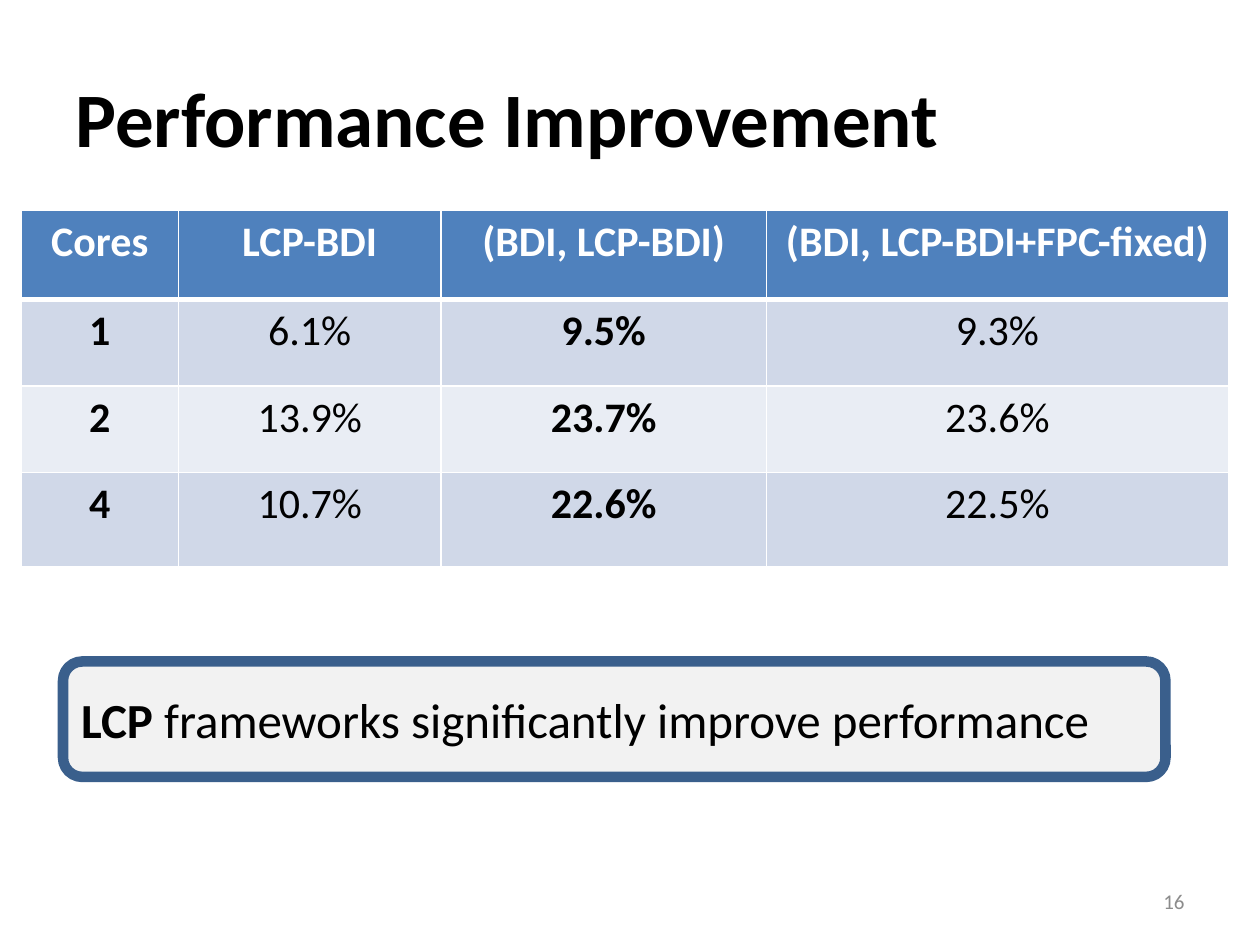
from dataclasses import dataclass

from lxml import etree
from pptx import Presentation
from pptx.dml.color import RGBColor
from pptx.enum.shapes import MSO_SHAPE
from pptx.enum.text import MSO_ANCHOR, PP_ALIGN
from pptx.oxml.ns import qn
from pptx.util import Pt

LEFT, CENTER, RIGHT = PP_ALIGN.LEFT, PP_ALIGN.CENTER, PP_ALIGN.RIGHT
MIDDLE = MSO_ANCHOR.MIDDLE
ROUNDED = MSO_SHAPE.ROUNDED_RECTANGLE

FONT = "Calibri"
COLORS = {
    "text": "000000",
    "header_text": "FFFFFF",
    "page_number": "8C8C8C",
    "header": "4F81BD",
    "odd_row": "D0D8E8",
    "even_row": "E9EDF4",
    "grid": "FFFFFF",
    "callout": "F2F2F2",
    "callout_line": "3A5F8C",
}

RESULTS = [
    ["Cores", "LCP-BDI", "(BDI, LCP-BDI)", "(BDI, LCP-BDI+FPC-fixed)"],
    ["1", "6.1%", "9.5%", "9.3%"],
    ["2", "13.9%", "23.7%", "23.6%"],
    ["4", "10.7%", "22.6%", "22.5%"],
]
COLUMN_WIDTHS = [90, 150, 186, 264]
ROW_HEIGHTS = [51, 49.5, 49.5, 54]
BOLD_COLUMNS = (0, 2)


@dataclass
class Box:
    left: float
    top: float
    width: float
    height: float

    def lengths(self) -> list:
        return [Pt(v) for v in (self.left, self.top, self.width, self.height)]


@dataclass
class TextStyle:
    size: float
    color: str = "text"
    bold: bool | None = None
    align: PP_ALIGN = LEFT


def rgb(name: str) -> RGBColor:
    return RGBColor.from_string(COLORS[name])


def style_paragraph(paragraph, style: TextStyle) -> None:
    paragraph.alignment = style.align
    font = paragraph.font
    font.name, font.size, font.bold = FONT, Pt(style.size), style.bold
    font.color.rgb = rgb(style.color)


def add_label(slide, text: str, box: Box, style: TextStyle) -> None:
    frame = slide.shapes.add_textbox(*box.lengths()).text_frame
    frame.word_wrap = True
    frame.vertical_anchor = MIDDLE
    frame.text = text
    style_paragraph(frame.paragraphs[0], style)


def set_borders(cell, bottom_width: float) -> None:
    """Draw grid lines; call before filling, as lines precede the fill in XML."""
    properties = cell._tc.get_or_add_tcPr()
    for side, width in (("L", 1), ("R", 1), ("T", 1), ("B", bottom_width)):
        line = etree.SubElement(properties, qn(f"a:ln{side}"), w=str(Pt(width)))
        fill = etree.SubElement(line, qn("a:solidFill"))
        etree.SubElement(fill, qn("a:srgbClr"), val=COLORS["grid"])


def fill_cell(cell, text: str, row: int, column: int) -> None:
    is_header = row == 0
    set_borders(cell, 3 if is_header else 1)
    cell.fill.solid()
    row_color = "odd_row" if row % 2 else "even_row"
    cell.fill.fore_color.rgb = rgb("header" if is_header else row_color)
    cell.text = text
    style_paragraph(cell.text_frame.paragraphs[0], TextStyle(
        24, "header_text" if is_header else "text",
        is_header or column in BOLD_COLUMNS, CENTER))


def add_results(slide, left: float, top: float) -> None:
    box = Box(left, top, sum(COLUMN_WIDTHS), sum(ROW_HEIGHTS))
    table = slide.shapes.add_table(
        len(ROW_HEIGHTS), len(COLUMN_WIDTHS), *box.lengths()).table
    for column, width in zip(table.columns, COLUMN_WIDTHS):
        column.width = Pt(width)
    for row, height in zip(table.rows, ROW_HEIGHTS):
        row.height = Pt(height)
    for r, values in enumerate(RESULTS):
        for c, value in enumerate(values):
            fill_cell(table.cell(r, c), value, r, c)


def add_callout(slide, bold_start: str, rest: str, box: Box) -> None:
    callout = slide.shapes.add_shape(ROUNDED, *box.lengths())
    callout.shadow.inherit = False
    callout.fill.solid()
    callout.fill.fore_color.rgb = rgb("callout")
    callout.line.color.rgb = rgb("callout_line")
    callout.line.width = Pt(6)
    frame = callout.text_frame
    frame.word_wrap = True
    frame.vertical_anchor = MIDDLE
    message = frame.paragraphs[0]
    style_paragraph(message, TextStyle(28))
    for text, bold in ((bold_start, True), (rest, False)):
        run = message.add_run()
        run.text = text
        run.font.bold = bold


def main() -> None:
    deck = Presentation()
    deck.slide_width, deck.slide_height = Pt(720), Pt(540)
    slide = deck.slides.add_slide(deck.slide_layouts[6])
    add_label(slide, "Performance Improvement", Box(36, 21.6, 648, 90),
              TextStyle(44, bold=True))
    add_label(slide, "16", Box(516, 500.5, 168, 28.75),
              TextStyle(12, "page_number", align=RIGHT))
    add_results(slide, 12, 120)
    add_callout(slide, "LCP", " frameworks significantly improve performance",
                Box(36, 378, 630, 66))
    deck.save("out.pptx")


if __name__ == "__main__":
    main()
